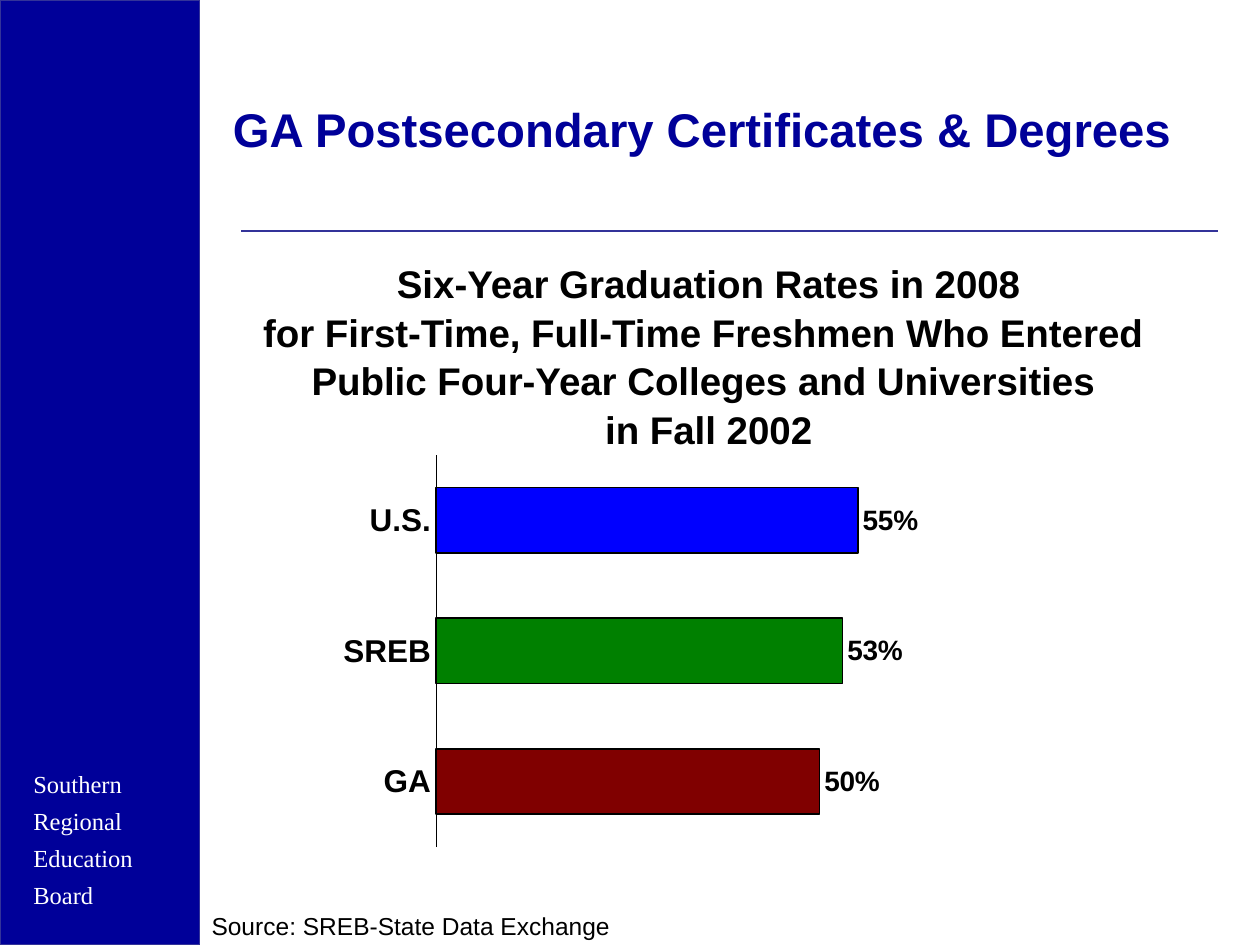
from lxml.etree import SubElement
from pptx import Presentation
from pptx.chart.data import CategoryChartData
from pptx.dml.color import RGBColor
from pptx.enum.chart import XL_CHART_TYPE, XL_LABEL_POSITION, XL_TICK_LABEL_POSITION, XL_TICK_MARK
from pptx.enum.shapes import MSO_CONNECTOR, MSO_SHAPE
from pptx.enum.text import PP_ALIGN
from pptx.oxml import parse_xml
from pptx.oxml.ns import nsdecls, qn
from pptx.util import Pt

COLORS = {
    "navy": "000099", "rule": "333399", "black": "000000", "white": "FFFFFF",
    "GA": "800000", "SREB": "008000", "U.S.": "0000FF",
}
RATES = {"GA": 0.50, "SREB": 0.53, "U.S.": 0.55}
HEADING = [
    "Six-Year Graduation Rates in 2008",
    "for First-Time, Full-Time Freshmen Who Entered ",
    "Public Four-Year Colleges and Universities ",
    "in Fall 2002",
]
PLOT_AREA = {"x": 0.145, "y": 0.033, "w": 0.841, "h": 0.935}


def color(name):
    return RGBColor.from_string(COLORS[name])


def style_font(font, size, name="black", bold=False, face="Arial"):
    font.name = face
    font.size = Pt(size)
    font.bold = bold
    font.color.rgb = color(name)


def style_line(line, name, width):
    line.color.rgb = color(name)
    line.width = Pt(width)


def add_side_band(slide):
    band = slide.shapes.add_shape(MSO_SHAPE.RECTANGLE, Pt(0), Pt(0), Pt(114), Pt(540))
    band.shadow.inherit = False
    band.fill.solid()
    band.fill.fore_color.rgb = color("navy")
    style_line(band.line, "rule", 0.75)


def add_rule(slide):
    rule = slide.shapes.add_connector(MSO_CONNECTOR.STRAIGHT, Pt(138), Pt(132), Pt(696), Pt(132))
    style_line(rule.line, "rule", 1)
    SubElement(rule._element.spPr, qn("a:effectLst"))


def add_text(slide, box, lines, size, align=PP_ALIGN.LEFT, spacing=None, **font):
    shape = slide.shapes.add_textbox(*map(Pt, box))
    frame = shape.text_frame
    frame.word_wrap = True
    frame.text = "\n".join(lines)
    for paragraph in frame.paragraphs:
        paragraph.alignment = align
        paragraph.line_spacing = spacing
        style_font(paragraph.font, size, **font)


def set_plot_area(chart):
    plot_area = chart._chartSpace.chart.plotArea
    for layout in plot_area.findall(qn("c:layout")):
        plot_area.remove(layout)
    modes = "".join(f'<c:{side}Mode val="edge"/>' for side in "xy")
    sizes = "".join(f'<c:{side} val="{value}"/>' for side, value in PLOT_AREA.items())
    plot_area.insert(0, parse_xml(
        f'<c:layout {nsdecls("c")}><c:manualLayout><c:layoutTarget val="inner"/>'
        f"{modes}{sizes}</c:manualLayout></c:layout>"
    ))


def style_axes(chart):
    for axis in (chart.category_axis, chart.value_axis):
        axis.major_tick_mark = axis.minor_tick_mark = XL_TICK_MARK.NONE
        axis.has_major_gridlines = False
    style_font(chart.category_axis.tick_labels.font, 18, bold=True)
    style_line(chart.category_axis.format.line, "black", 0.25)
    values = chart.value_axis
    values.minimum_scale, values.maximum_scale = 0, 1
    values.tick_label_position = XL_TICK_LABEL_POSITION.NONE
    values.format.line.fill.background()


def style_bars(plot):
    plot.gap_width = 100
    plot.vary_by_categories = False
    series = plot.series[0]
    for index, region in enumerate(RATES):
        bar = series.points[index].format
        bar.fill.solid()
        bar.fill.fore_color.rgb = color(region)
        style_line(bar.line, "black", 1)
    labels = series.data_labels
    labels.show_value = True
    labels.number_format = "0%"
    labels.number_format_is_linked = False
    labels.position = XL_LABEL_POSITION.OUTSIDE_END
    style_font(labels.font, 16, bold=True)


def add_rate_chart(slide):
    data = CategoryChartData(number_format="0%")
    data.categories = list(RATES)
    data.add_series("Series 1", list(RATES.values()))
    box = map(Pt, (173.5, 252, 521.3, 239.8))
    chart = slide.shapes.add_chart(XL_CHART_TYPE.BAR_CLUSTERED, *box, data).chart
    chart.has_legend = False
    chart.has_title = False
    style_font(chart.font, 13.2, bold=True)
    set_plot_area(chart)
    style_axes(chart)
    style_bars(chart.plots[0])


def main():
    """Build the graduation rates slide."""
    presentation = Presentation()
    presentation.slide_width, presentation.slide_height = Pt(720), Pt(540)
    slide = presentation.slides.add_slide(presentation.slide_layouts[6])
    add_side_band(slide)
    add_text(slide, (12, 432, 114, 108), ["Southern\vRegional\vEducation\vBoard"], 14,
             spacing=1.25, name="white", face="Times New Roman")
    add_rule(slide)
    add_rate_chart(slide)
    add_text(slide, (132, 144, 546, 140.4), HEADING, 22,
             align=PP_ALIGN.CENTER, spacing=1.05, bold=True)
    add_text(slide, (126, 54, 570, 54.7), ["GA Postsecondary Certificates & Degrees"], 27,
             name="navy", bold=True)
    add_text(slide, (113.8, 517, 452, 23.8), ["Source: SREB-State Data Exchange"], 14)
    presentation.save("out.pptx")


if __name__ == "__main__":
    main()
